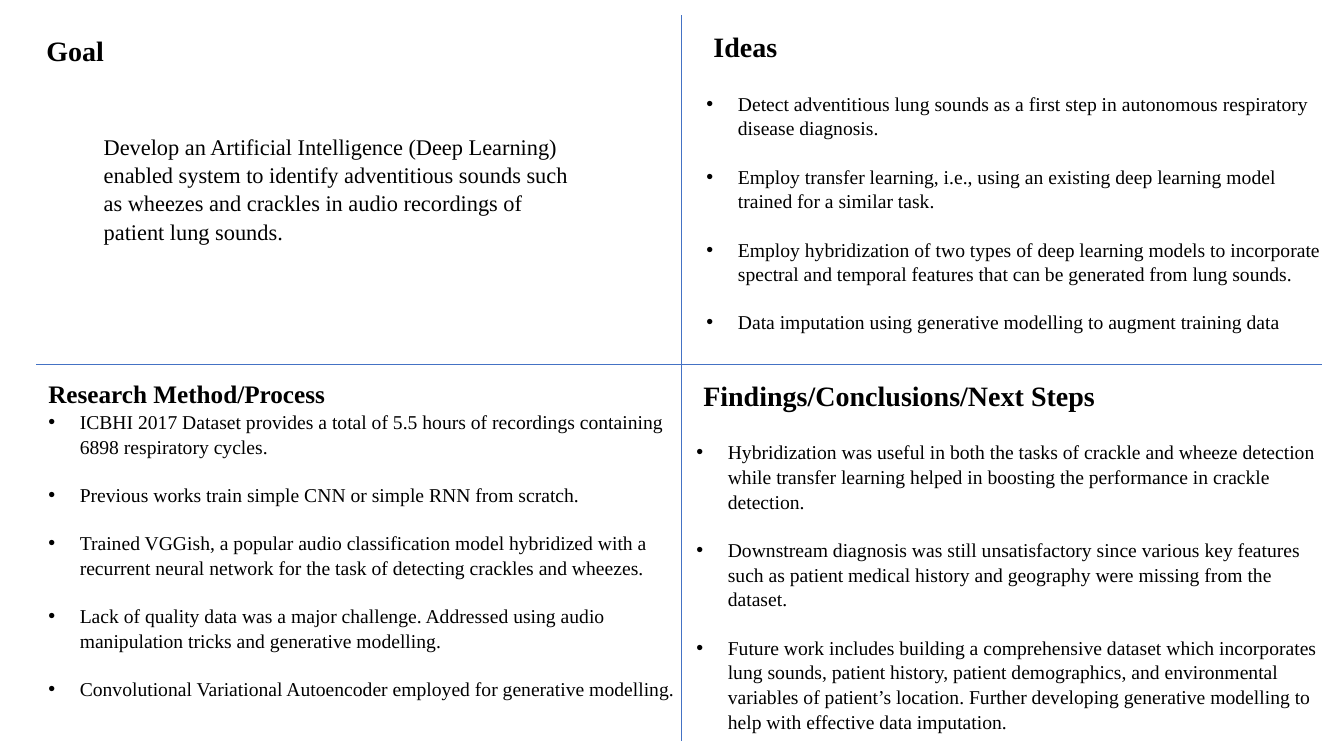
from dataclasses import dataclass

from lxml import etree
from pptx import Presentation
from pptx.dml.color import RGBColor
from pptx.enum.shapes import MSO_CONNECTOR
from pptx.enum.text import MSO_AUTO_SIZE, PP_ALIGN
from pptx.oxml.ns import qn
from pptx.util import Pt


@dataclass(frozen=True)
class Theme:
    font: str = "Times New Roman"
    ink: RGBColor = RGBColor(0x00, 0x00, 0x00)
    rule: RGBColor = RGBColor(0x44, 0x72, 0xC4)
    heading: int = 20
    small_heading: int = 18
    goal: int = 16
    body: int = 14
    line_spacing: float = 1.05


theme = Theme()

deck = Presentation()
deck.slide_width, deck.slide_height = Pt(960), Pt(540)
page = deck.slides.add_slide(deck.slide_layouts[6])


def add_box(left, top, width, height, lines):
    box = page.shapes.add_textbox(Pt(left), Pt(top), Pt(width), Pt(height))
    box.text_frame.text = "\n".join(lines)
    box.text_frame.word_wrap = True
    box.text_frame.auto_size = MSO_AUTO_SIZE.SHAPE_TO_FIT_TEXT
    return box


def style(para, size, bold=False, margin=0, bullet=False):
    properties = para._p.get_or_add_pPr()
    properties.set("marL", str(Pt(margin)))
    if bullet:
        properties.set("indent", str(-Pt(margin)))
        etree.SubElement(properties, qn("a:buFont"), typeface="Arial")
        etree.SubElement(properties, qn("a:buChar"), char="•")
    para.line_spacing = theme.line_spacing
    for span in para.runs:
        span.font.name = theme.font
        span.font.size = Pt(size)
        span.font.bold = bold
        span.font.color.rgb = theme.ink


# Lines that split the page into quadrants
for start_x, start_y, end_x, end_y in [(486.5, 10.8, 486.5, 529.2), (26, 260, 944.5, 260)]:
    divider = page.shapes.add_connector(
        MSO_CONNECTOR.STRAIGHT, Pt(start_x), Pt(start_y), Pt(end_x), Pt(end_y))
    divider.line.color.rgb = theme.rule
    divider.line.width = Pt(0.5)
    etree.SubElement(divider._element.spPr, qn("a:effectLst"))

# Goal
goal_title = add_box(26, 19.4, 60, 31.5, ["Goal"])
goal_title.text_frame.word_wrap = False
style(goal_title.text_frame.paragraphs[0], theme.heading, bold=True)

goal_text = add_box(67, 90.7, 463, 123.8, [
    "Develop an Artificial Intelligence (Deep Learning)",
    "enabled system to identify adventitious sounds such",
    "as wheezes and crackles in audio recordings of",
    "patient lung sounds.",
])
for para in goal_text.text_frame.paragraphs:
    style(para, theme.goal)
    para.alignment = PP_ALIGN.JUSTIFY

# Quadrants: left, top, height, heading size, heading margin, gap under heading, lines
quadrants = [
    (497.5, 16.6, 220.3, theme.heading, 5, 19.3, [
        "Ideas",
        "Detect adventitious lung sounds as a first step in autonomous respiratory disease diagnosis.",
        "Employ transfer learning, i.e., using an existing deep learning model trained for a similar task.",
        "Employ hybridization of two types of deep learning models to incorporate spectral and temporal "
        "features that can be generated from lung sounds.",
        "Data imputation using generative modelling to augment training data",
    ]),
    (27.4, 265.7, 232.6, theme.small_heading, 0, 0, [
        "Research Method/Process",
        "ICBHI 2017 Dataset provides a total of 5.5 hours of recordings containing 6898 respiratory cycles.",
        "Previous works train simple CNN or simple RNN from scratch.",
        "Trained VGGish, a popular audio classification model hybridized with a recurrent neural network "
        "for the task of detecting crackles and wheezes.",
        "Lack of quality data was a major challenge. Addressed using audio manipulation tricks and "
        "generative modelling.",
        "Convolutional Variational Autoencoder employed for generative modelling.",
    ]),
    (490.3, 265.7, 254.2, theme.heading, 5, 19.3, [
        "Findings/Conclusions/Next Steps",
        "Hybridization was useful in both the tasks of crackle and wheeze detection while transfer "
        "learning helped in boosting the performance in crackle detection.",
        "Downstream diagnosis was still unsatisfactory since various key features such as patient "
        "medical history and geography were missing from the dataset.",
        "Future work includes building a comprehensive dataset which incorporates lung sounds, patient "
        "history, patient demographics, and environmental variables of patient’s location. Further "
        "developing generative modelling to help with effective data imputation.",
    ]),
]
for left, top, height, heading_size, heading_margin, first_gap, lines in quadrants:
    quadrant = add_box(left, top, 463, height, lines)
    heading, *points = quadrant.text_frame.paragraphs
    style(heading, heading_size, bold=True, margin=heading_margin)
    for number, point in enumerate(points):
        style(point, theme.body, margin=22.5, bullet=True)
        point.space_before = Pt(16.8 if number else first_gap)

deck.save("out.pptx")
